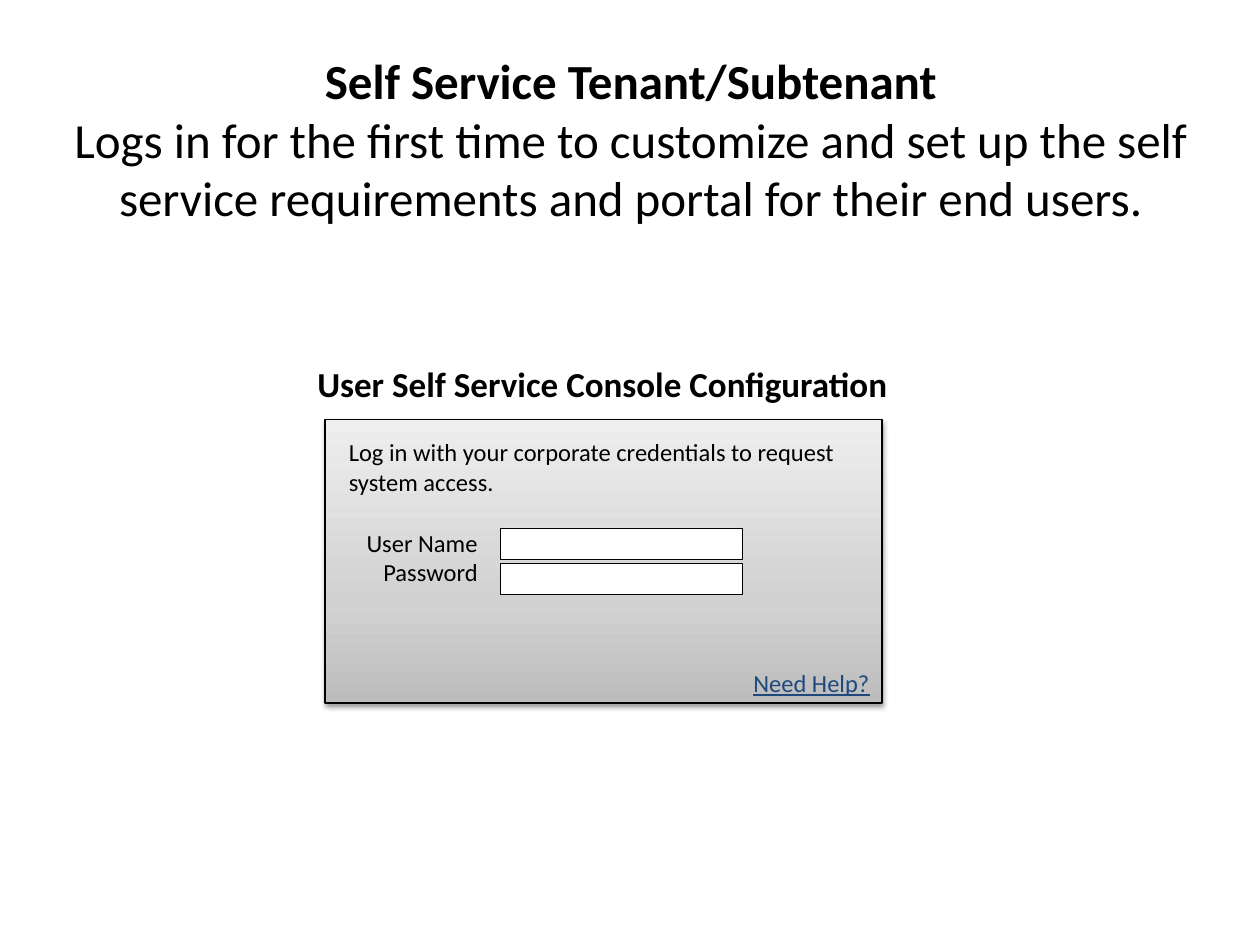
from lxml import etree
from pptx import Presentation
from pptx.dml.color import RGBColor
from pptx.enum import shapes, text
from pptx.oxml.ns import qn
from pptx.util import Inches, Pt

BLACK = RGBColor(0x00, 0x00, 0x00)
WHITE = RGBColor(0xFF, 0xFF, 0xFF)
LINK_BLUE = RGBColor(0x1F, 0x49, 0x7D)
PANEL_STOPS = [(0, "BDBDBD"), (35, "D1D1D1"), (100, "EEEEEE")]

HEADLINE = "Self Service Tenant/Subtenant"
SUMMARY = ("Logs in for the first time to customize and set up the self "
           "service requirements and portal for their end users.")
CONSOLE_TITLE = "User Self Service Console Configuration"
PROMPT = "Log in with your corporate credentials to request system access."
FIELD_LABELS = ["User Name", "Password"]
HELP_LINK = "Need Help?"

PANEL = (2.58, 3.33, 4.42, 2.25)
FIELD_LEFT, FIELD_TOP, FIELD_WIDTH, FIELD_HEIGHT = 3.97, 4.19, 1.92, 0.25
FIELD_PITCH = 0.28

LEFT, CENTER, RIGHT = (text.PP_ALIGN.LEFT, text.PP_ALIGN.CENTER,
                       text.PP_ALIGN.RIGHT)
TOP, MIDDLE = text.MSO_ANCHOR.TOP, text.MSO_ANCHOR.MIDDLE


def add_text(slide, box, lines, size=14, align=LEFT, anchor=TOP,
             color=BLACK, bold=None, wrap=True):
    """Add a text box with one paragraph per line; return its text frame."""
    frame = slide.shapes.add_textbox(*map(Inches, box)).text_frame
    frame.word_wrap = wrap
    frame.vertical_anchor = anchor
    frame.text = "\n".join(lines)
    for paragraph in frame.paragraphs:
        paragraph.alignment = align
        font = paragraph.font
        font.name, font.size, font.bold = "Calibri", Pt(size), bold
        font.color.rgb = color
    return frame


def add_rectangle(slide, box, line_width):
    rectangle = slide.shapes.add_shape(shapes.MSO_SHAPE.RECTANGLE,
                                       *map(Inches, box))
    rectangle.shadow.inherit = False
    rectangle.line.color.rgb = BLACK
    rectangle.line.width = Pt(line_width)
    return rectangle


def add_color(parent, value):
    return etree.SubElement(parent, qn("a:srgbClr"), val=value)


def add_panel(slide):
    panel = add_rectangle(slide, PANEL, 0.75)
    panel.fill.gradient()
    panel.fill.gradient_angle = 90
    properties = panel.element.spPr

    stops = properties.find(".//" + qn("a:gsLst"))
    for stop in list(stops):
        stops.remove(stop)
    for percent, value in PANEL_STOPS:
        stop = etree.SubElement(stops, qn("a:gs"), pos=str(percent * 1000))
        add_color(stop, value)

    shadow = etree.SubElement(
        properties.find(qn("a:effectLst")), qn("a:outerShdw"),
        blurRad=str(Pt(3.1)), dist=str(Pt(1.6)), dir=str(90 * 60000),
        rotWithShape="0")
    etree.SubElement(add_color(shadow, "000000"), qn("a:alpha"), val="38000")


def add_title(slide):
    frame = add_text(slide, (0.42, 0.5, 9.17, 1.2), [HEADLINE], size=28,
                     align=CENTER, anchor=MIDDLE)
    paragraph = frame.paragraphs[0]
    paragraph.runs[0].font.bold = True
    paragraph.add_line_break()
    paragraph.add_run().text = SUMMARY


def main():
    deck = Presentation()
    deck.slide_width, deck.slide_height = Inches(10), Inches(7.5)
    slide = deck.slides.add_slide(deck.slide_layouts[6])

    add_title(slide)
    add_panel(slide)
    add_text(slide, (2.8, 4.14, 1.09, 0.57), FIELD_LABELS, align=RIGHT,
             wrap=False)
    add_text(slide, (2.67, 3.42, 4.33, 0.57), [PROMPT])
    help_text = add_text(slide, (2.67, 5.25, 4.33, 0.34), [HELP_LINK],
                         align=RIGHT, color=LINK_BLUE)
    help_text.paragraphs[0].font.underline = True

    for row in range(len(FIELD_LABELS)):
        field = add_rectangle(slide, (FIELD_LEFT, FIELD_TOP + row * FIELD_PITCH,
                                      FIELD_WIDTH, FIELD_HEIGHT), 0.25)
        field.fill.solid()
        field.fill.fore_color.rgb = WHITE

    add_text(slide, (2.42, 2.75, 4.83, 0.58), [CONSOLE_TITLE], size=20,
             anchor=MIDDLE, bold=True)
    deck.save("out.pptx")


if __name__ == "__main__":
    main()
